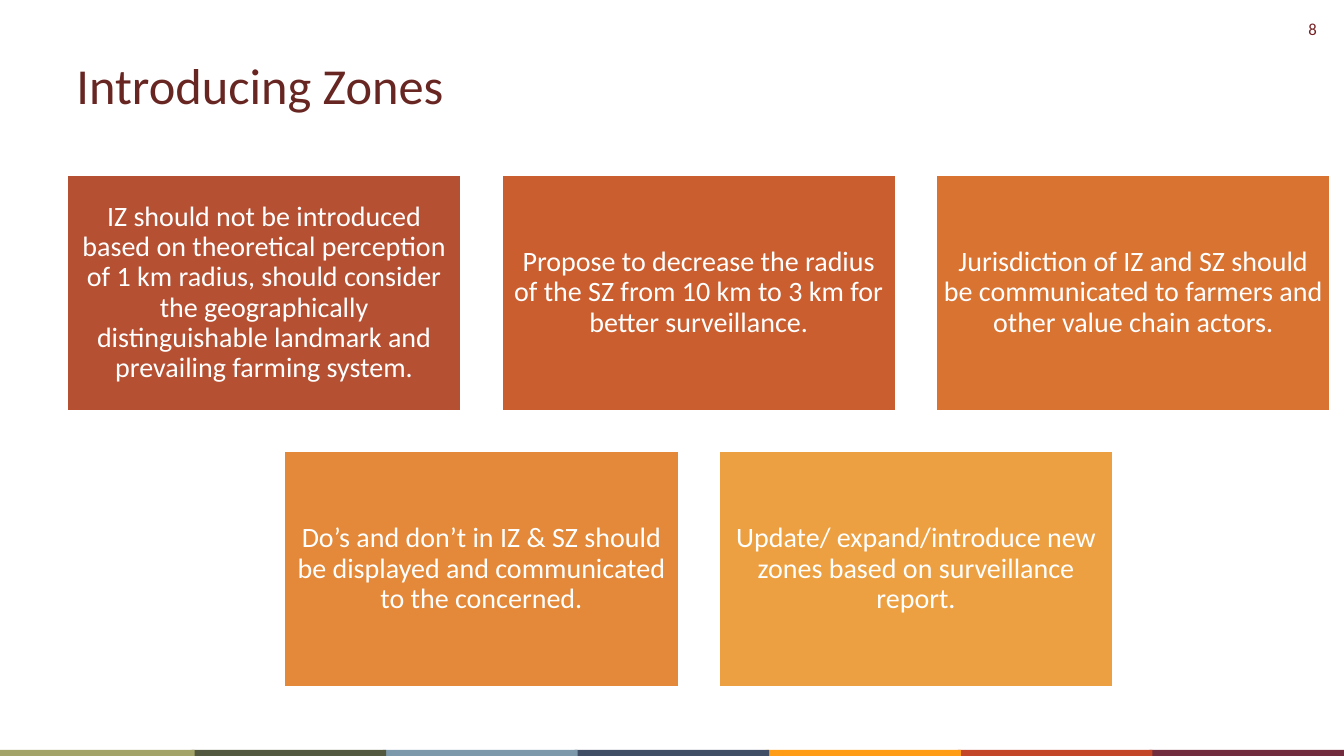
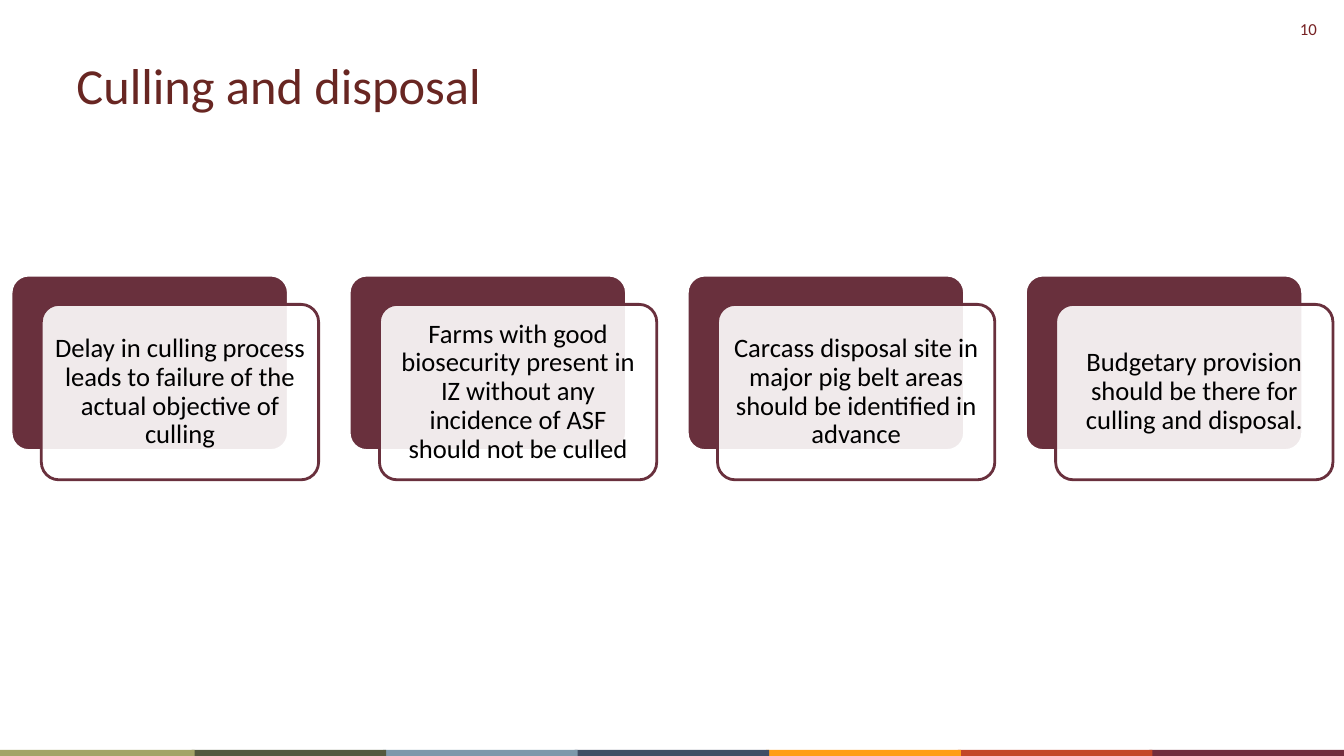
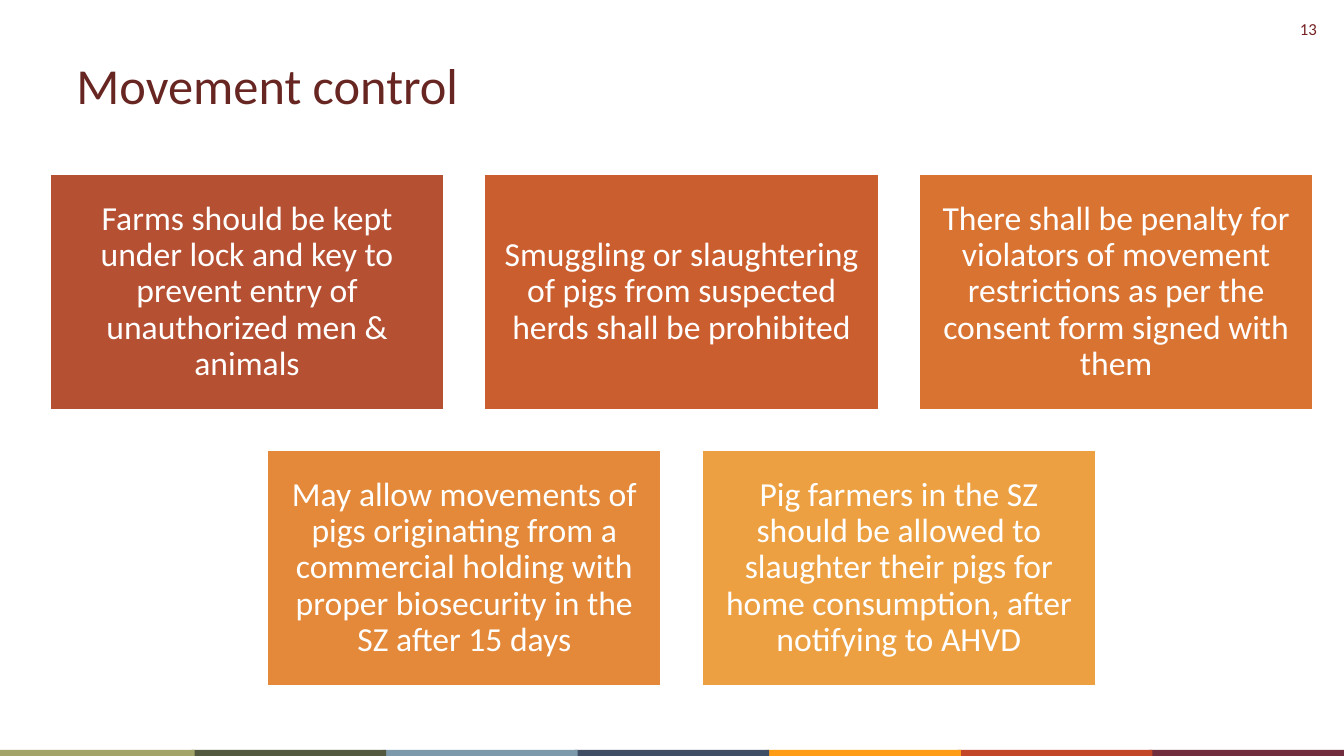
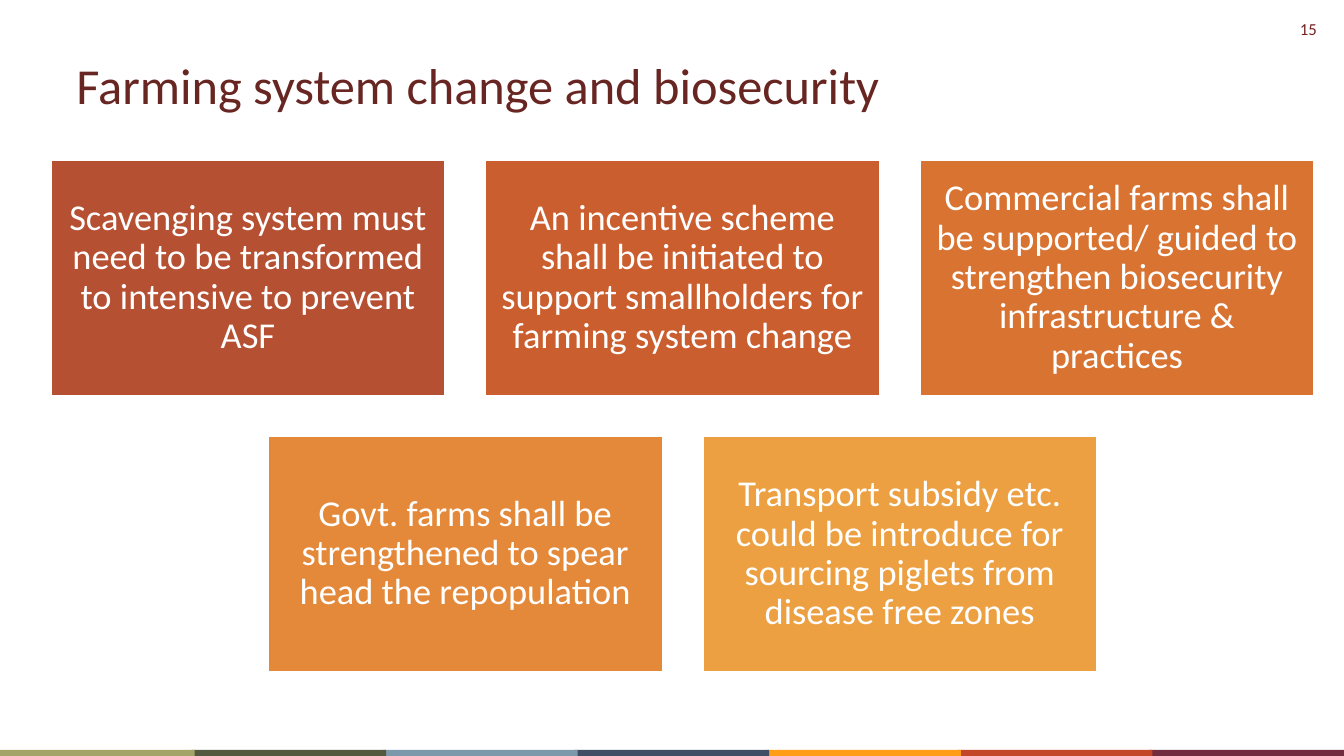
from lxml import etree
from pptx import Presentation
from pptx.dml.color import RGBColor
from pptx.enum.shapes import MSO_SHAPE
from pptx.enum.text import MSO_ANCHOR, PP_ALIGN
from pptx.oxml.ns import qn
from pptx.util import Inches, Pt

FONT = "Calibri"
WHITE = RGBColor(0xFF, 0xFF, 0xFF)
BLACK = RGBColor(0x00, 0x00, 0x00)
TITLE_RED = RGBColor(0x68, 0x26, 0x22)
NUMBER_RED = RGBColor(0x76, 0x21, 0x23)
PLUM = RGBColor(0x69, 0x30, 0x3D)
TILE_COLORS = [RGBColor.from_string(code) for code in
               ("B65033", "CB5E2F", "D97332", "E38939", "ECA041")]
BAND_COLORS = [RGBColor.from_string(code) for code in
               ("A3A467", "53593E", "7C98AB", "404E65", "FF9E16", "C34628", "712C3D")]

# Lengths below are in inches.
SLIDE_W, SLIDE_H = 13.33, 7.5
BAND_PITCH, BAND_W, BAND_H = 1.9, 1.93, 0.06
TILE_W, TILE_H, TILE_GAP, TILES_PER_ROW = 3.92, 2.35, 0.39, 3
CARD_W, CARD_H, CARD_TOP = 2.75, 1.74, 2.73
CARD_FIRST, CARD_LAST = 0.11, 10.17
CARD_SHIFT_X, CARD_SHIFT_Y = 0.3, 0.29
CARD_SIZE, CARD_INSET = 19, 0.08

SLIDES = [
    {"number": 8, "title": "Introducing Zones",
     "origin": (0.66, 1.73), "size": 20, "inset": 0.08,
     "tiles": [
         "IZ should not be introduced based on theoretical perception of 1 km radius, "
         "should consider the geographically distinguishable landmark and prevailing "
         "farming system.",
         "Propose to decrease the radius of the SZ from 10 km to 3 km for better "
         "surveillance.",
         "Jurisdiction of IZ and SZ should be communicated to farmers and other value "
         "chain actors.",
         "Do’s and don’t in IZ & SZ should be displayed and communicated to the "
         "concerned.",
         "Update/ expand/introduce new zones based on surveillance report.",
     ]},
    {"number": 10, "title": "Culling and disposal",
     "cards": [
         "Delay in culling process leads to failure of the actual objective of culling",
         "Farms with good biosecurity present in IZ without any incidence of ASF should "
         "not be culled",
         "Carcass disposal site in major pig belt areas should be identified in advance",
         "Budgetary provision should be there for culling and disposal.",
     ]},
    {"number": 13, "title": "Movement control",
     "origin": (0.49, 1.72), "size": 24, "inset": 0.1,
     "tiles": [
         "Farms should be kept under lock and key to prevent entry of unauthorized men "
         "& animals",
         "Smuggling or slaughtering of pigs from suspected herds shall be prohibited",
         "There shall be penalty for violators of movement restrictions as per the "
         "consent form signed with them",
         "May allow movements of pigs originating from a commercial holding with proper "
         "biosecurity in the SZ after 15 days",
         "Pig farmers in the SZ should be allowed to slaughter their pigs for home "
         "consumption, after notifying to AHVD",
     ]},
    {"number": 15, "title": "Farming system change and biosecurity",
     "origin": (0.5, 1.58), "size": 26, "inset": 0.11,
     "tiles": [
         "Scavenging system must need to be transformed to intensive to prevent ASF",
         "An incentive scheme shall be initiated to support smallholders for farming "
         "system change",
         "Commercial farms shall be supported/ guided to strengthen biosecurity "
         "infrastructure & practices",
         "Govt. farms shall be strengthened to spear head the repopulation",
         "Transport subsidy etc. could be introduce for sourcing piglets from disease "
         "free zones",
     ]},
]


def write(shape, text, size, color, align, anchor):
    frame = shape.text_frame
    frame.word_wrap = True
    frame.vertical_anchor = anchor
    frame.text = text
    paragraph = frame.paragraphs[0]
    paragraph.alignment = align
    font = paragraph.runs[0].font
    font.name, font.size, font.color.rgb = FONT, Pt(size), color


def add_label(slide, box, text, size, color, align, anchor):
    label = slide.shapes.add_textbox(*map(Inches, box))
    write(label, text, size, color, align, anchor)


def add_panel(slide, kind, box, fill, line=None):
    panel = slide.shapes.add_shape(kind, *map(Inches, box))
    panel.shadow.inherit = False
    panel.fill.solid()
    panel.fill.fore_color.rgb = fill
    if line is None:
        panel.line.fill.background()
    else:
        panel.line.color.rgb = line
        panel.line.width = Pt(2)
    if kind == MSO_SHAPE.ROUNDED_RECTANGLE:
        panel.adjustments[0] = 0.1
    return panel


def write_centred(panel, text, size, color, inset):
    write(panel, text, size, color, PP_ALIGN.CENTER, MSO_ANCHOR.MIDDLE)
    frame = panel.text_frame
    frame.margin_left = frame.margin_right = Inches(inset)
    frame.margin_top = frame.margin_bottom = Inches(inset)
    frame.paragraphs[0].line_spacing = 0.9


def set_opacity(panel, percent):
    color = panel.fill._xPr.find(qn("a:solidFill")).find(qn("a:srgbClr"))
    etree.SubElement(color, qn("a:alpha")).set("val", str(percent * 1000))


def add_frame(slide, number, title):
    """Add the page number, the bottom colour band and the title."""
    add_label(slide, (12.46, 0.14, 0.7, 0.3), str(number), 12, NUMBER_RED,
              PP_ALIGN.RIGHT, MSO_ANCHOR.TOP)
    # Right to left, so that each band covers the start of the next one.
    for column, color in reversed(list(enumerate(BAND_COLORS))):
        add_panel(slide, MSO_SHAPE.RECTANGLE,
                  (column * BAND_PITCH, SLIDE_H - BAND_H, BAND_W, BAND_H), color)
    add_label(slide, (0.66, 0.47, 12, 0.74), title, 36, TITLE_RED,
              PP_ALIGN.LEFT, MSO_ANCHOR.MIDDLE)


def add_tiles(slide, texts, origin, size, inset):
    """Lay tiles out in rows, centring a row that is not full."""
    left, top = origin
    pitch_x, pitch_y = TILE_W + TILE_GAP, TILE_H + TILE_GAP
    for index, (text, color) in enumerate(zip(texts, TILE_COLORS)):
        row, column = divmod(index, TILES_PER_ROW)
        in_row = min(TILES_PER_ROW, len(texts) - row * TILES_PER_ROW)
        column += (TILES_PER_ROW - in_row) / 2
        box = (left + column * pitch_x, top + row * pitch_y, TILE_W, TILE_H)
        tile = add_panel(slide, MSO_SHAPE.RECTANGLE, box, color, WHITE)
        write_centred(tile, text, size, WHITE, inset)


def add_cards(slide, texts):
    """Add a row of translucent cards, each over a shifted plum backing."""
    pitch = (CARD_LAST - CARD_FIRST) / (len(texts) - 1)
    for index, text in enumerate(texts):
        left = CARD_FIRST + index * pitch
        add_panel(slide, MSO_SHAPE.ROUNDED_RECTANGLE,
                  (left, CARD_TOP, CARD_W, CARD_H), PLUM, WHITE)
        card = add_panel(slide, MSO_SHAPE.ROUNDED_RECTANGLE,
                         (left + CARD_SHIFT_X, CARD_TOP + CARD_SHIFT_Y, CARD_W, CARD_H),
                         WHITE, PLUM)
        set_opacity(card, 90)
        write_centred(card, text, CARD_SIZE, BLACK, CARD_INSET)


def main():
    deck = Presentation()
    deck.slide_width, deck.slide_height = Inches(SLIDE_W), Inches(SLIDE_H)
    blank = deck.slide_layouts[6]
    for content in SLIDES:
        slide = deck.slides.add_slide(blank)
        add_frame(slide, content["number"], content["title"])
        if "cards" in content:
            add_cards(slide, content["cards"])
        else:
            add_tiles(slide, content["tiles"], content["origin"],
                      content["size"], content["inset"])
    deck.save("out.pptx")


if __name__ == "__main__":
    main()
